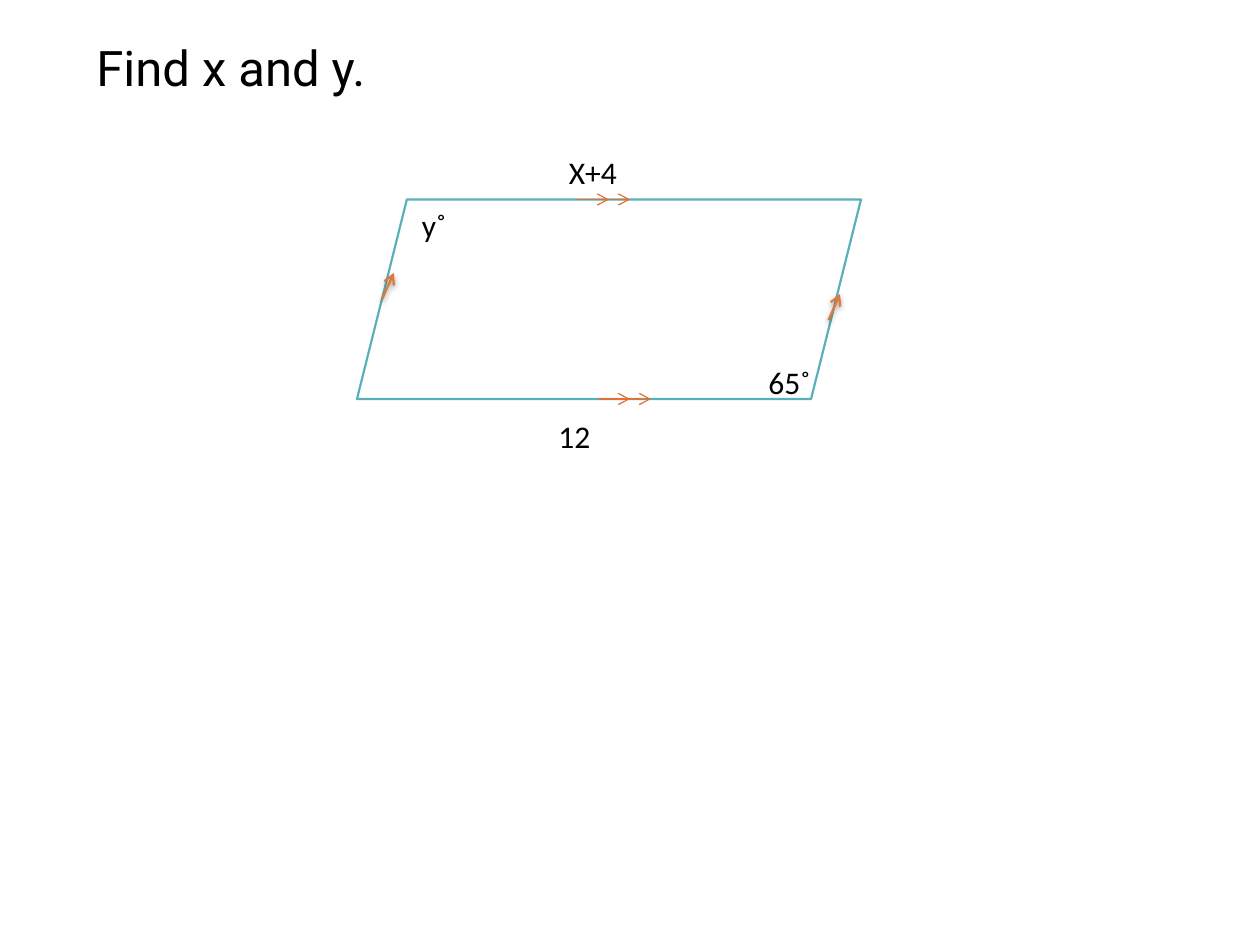
from lxml.etree import SubElement
from pptx import Presentation
from pptx.dml.color import RGBColor
from pptx.enum.shapes import MSO_CONNECTOR, MSO_SHAPE
from pptx.enum.text import MSO_AUTO_SIZE
from pptx.oxml.ns import qn
from pptx.util import Inches, Pt

CELL = Inches(10) / 120


def cells(*counts):
    return [round(count * CELL) for count in counts]


def color(value):
    return RGBColor.from_string(value)


def add_text(slide, text, box, font="Calibri", size=18, fill="000000"):
    shape = slide.shapes.add_textbox(*cells(*box))
    frame = shape.text_frame
    frame.word_wrap = True
    frame.auto_size = MSO_AUTO_SIZE.SHAPE_TO_FIT_TEXT
    run = frame.paragraphs[0].add_run()
    run.text = text
    run.font.name = font
    run.font.size = Pt(size)
    run.font.color.rgb = color(fill)


def add_shadow(effects):
    shadow = SubElement(effects, qn("a:outerShdw"), blurRad=str(Pt(3.1)),
                        dist=str(Pt(1.6)), dir="5400000", rotWithShape="0")
    black = SubElement(shadow, qn("a:srgbClr"), val="000000")
    SubElement(black, qn("a:alpha"), val="38000")


def add_arrow(slide, start, end, fill, width, shadow=False):
    connector = slide.shapes.add_connector(
        MSO_CONNECTOR.STRAIGHT, *cells(*start, *end))
    connector.line.color.rgb = color(fill)
    connector.line.width = Pt(width)
    SubElement(connector.line._get_or_add_ln(), qn("a:tailEnd"), type="arrow")
    effects = SubElement(connector._element.spPr, qn("a:effectLst"))
    if shadow:
        add_shadow(effects)


def add_title(slide, box):
    add_text(slide, "Find x and y.", box, font="Roboto", size=28)


def add_figure(slide, box):
    left, top, width, height = box
    outline = slide.shapes.add_shape(MSO_SHAPE.PARALLELOGRAM, *cells(*box))
    outline.shadow.inherit = False
    outline.fill.solid()
    outline.fill.fore_color.rgb = color("FFFFFF")
    outline.line.color.rgb = color("59B0B9")
    outline.line.width = Pt(1.25)

    for x, y in ((2.4, 9.5), (44.9, 11.5)):
        add_arrow(slide, (left + x, top + y), (left + x + 1.1, top + y - 2.5),
                  "E0773C", 1.25, shadow=True)
    for x, y in ((21, 0), (23, 0), (25, height), (23, height)):
        add_arrow(slide, (left + x, top + y), (left + x + 3, top + y),
                  "DF7337", 0.75)

    labels = (
        ("y˚", 5, 0, 5, 5),
        ("65˚", 38, 15, 9, 4.8),
        ("X+4", 19, -5, 13, 5),
        ("12", 18, 20.1, 11, 4.8),
    )
    for text, x, y, label_width, label_height in labels:
        add_text(slide, text, (left + x, top + y, label_width, label_height))


def main():
    presentation = Presentation()
    presentation.slide_width = Inches(10)
    presentation.slide_height = Inches(7.5)
    slide = presentation.slides.add_slide(presentation.slide_layouts[6])
    add_title(slide, (8, 3, 59, 6.84))
    add_figure(slide, (34, 19, 48, 19))
    presentation.save("out.pptx")


if __name__ == "__main__":
    main()
